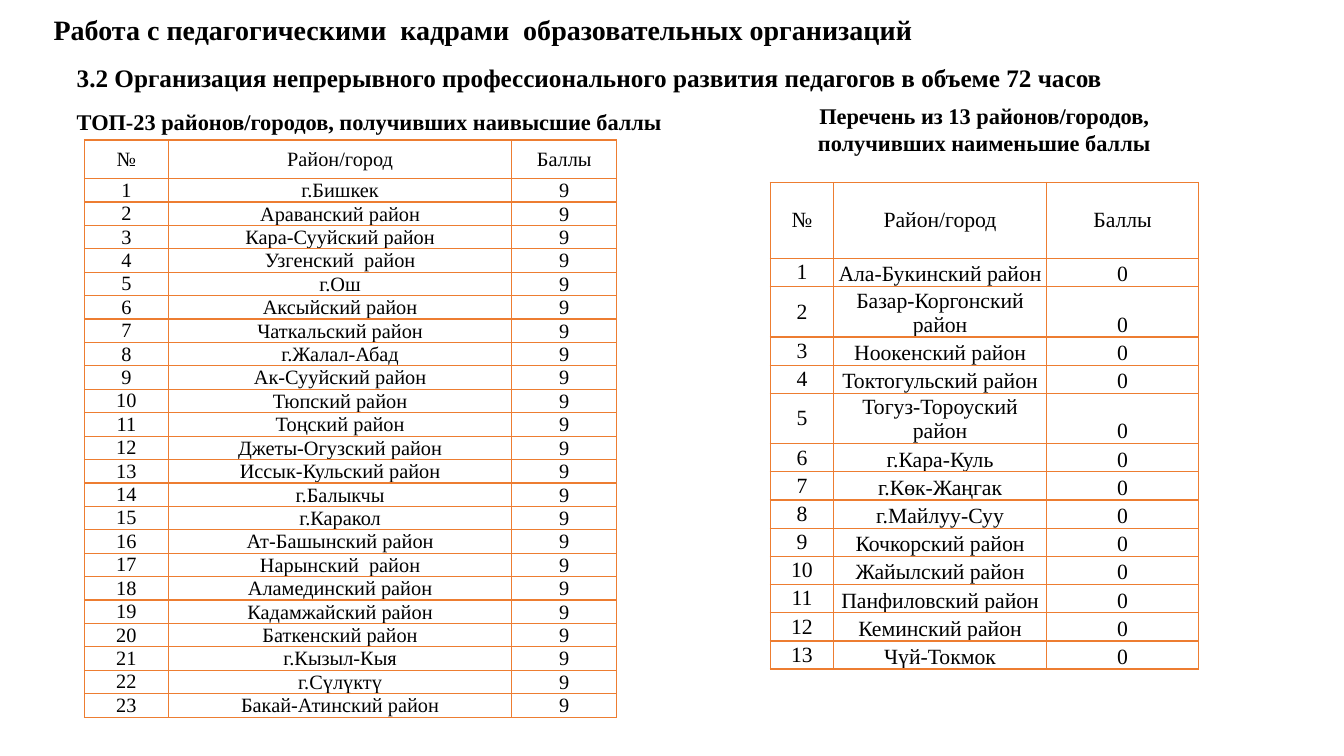
from dataclasses import dataclass

from lxml.etree import SubElement
from pptx import Presentation
from pptx.dml.color import RGBColor
from pptx.enum.text import MSO_ANCHOR, PP_ALIGN
from pptx.oxml.ns import qn
from pptx.slide import Slide
from pptx.table import _Cell
from pptx.text.text import TextFrame
from pptx.util import Cm, Pt


@dataclass(frozen=True)
class Theme:
    """Colours, font and type sizes in points."""
    font: str = "Times New Roman"
    ink: str = "000000"
    border: str = "ED7D31"
    border_width: float = 1
    title: float = 20
    subtitle: float = 18
    caption: float = 16
    top_table: float = 14.5
    low_table: float = 15.5


@dataclass(frozen=True)
class Label:
    """A bold text box, measured in centimetres."""
    text: str
    left: float
    top: float
    width: float
    height: float
    size: float
    align: PP_ALIGN = PP_ALIGN.CENTER
    anchor: MSO_ANCHOR = MSO_ANCHOR.TOP
    indent: float = 0.25
    spacing: float = 1.0


@dataclass(frozen=True)
class Ranking:
    """A numbered table of districts that share one score."""
    names: tuple[str, ...]
    score: int
    left: float
    top: float
    widths: tuple[float, ...]
    header_height: float
    row_height: float
    size: float
    tall_rows: tuple[int, ...] = ()
    tall_height: float = 1.27


THEME = Theme()
HEADER = ("№", "Район/город", "Баллы")

LABELS = (
    Label("3.2 Организация непрерывного профессионального развития педагогов в объеме 72 часов",
          0.25, 1.14, 29.21, 1.73, THEME.subtitle, anchor=MSO_ANCHOR.MIDDLE, spacing=0.9),
    Label("ТОП-23 районов/городов, получивших наивысшие баллы",
          1.42, 2.59, 15.77, 0.94, THEME.caption),
    Label("Перечень из 13 районов/городов, получивших наименьшие баллы",
          19.05, 2.46, 11.51, 1.63, THEME.caption),
    Label("Работа с педагогическими  кадрами  образовательных организаций",
          0.66, 0.2, 24.16, 1.12, THEME.title, align=PP_ALIGN.LEFT, indent=0.69),
)

RANKINGS = (
    Ranking(
        ("г.Бишкек", "Араванский район", "Кара-Сууйский район", "Узгенский  район", "г.Ош",
         "Аксыйский район", "Чаткальский район", "г.Жалал-Абад", "Ак-Сууйский район",
         "Тюпский район", "Тоңский район", "Джеты-Огузский район", "Иссык-Кульский район",
         "г.Балыкчы", "г.Каракол", "Ат-Башынский район", "Нарынский  район",
         "Аламединский район", "Кадамжайский район", "Баткенский район", "г.Кызыл-Кыя",
         "г.Сүлүктү", "Бакай-Атинский район"),
        9, 2.13, 3.53, (2.11, 8.66, 2.64), 0.97, 0.59, THEME.top_table),
    Ranking(
        ("Ала-Букинский район", "Базар-Коргонский район", "Ноокенский район",
         "Токтогульский район", "Тогуз-Тороуский район", "г.Кара-Куль", "г.Көк-Жаңгак",
         "г.Майлуу-Суу", "Кочкорский район", "Жайылский район", "Панфиловский район",
         "Кеминский район", "Чүй-Токмок"),
        0, 19.41, 4.6, (1.6, 5.36, 3.84), 1.91, 0.71, THEME.low_table, tall_rows=(2, 5)),
)


def write(tf: TextFrame, text: str, *, size: float, bold: bool = False,
          align: PP_ALIGN = PP_ALIGN.CENTER, spacing: float = 1.0) -> None:
    """Put one formatted paragraph into a text frame."""
    p = tf.paragraphs[0]
    p.alignment = align
    p.line_spacing = spacing
    r = p.add_run()
    r.text = text
    r.font.name = THEME.font
    r.font.size = Pt(size)
    r.font.bold = bold
    r.font.color.rgb = RGBColor.from_string(THEME.ink)


def add_label(s: Slide, label: Label) -> None:
    """Draw one heading."""
    sp = s.shapes.add_textbox(Cm(label.left), Cm(label.top), Cm(label.width), Cm(label.height))
    tf = sp.text_frame
    tf.word_wrap = True
    tf.vertical_anchor = label.anchor
    tf.margin_left = Cm(label.indent)
    write(tf, label.text, size=label.size, bold=True, align=label.align, spacing=label.spacing)


def format_cell(cell: _Cell, anchor: MSO_ANCHOR) -> None:
    """Give a cell no margins, thin borders and no fill."""
    cell.margin_left = cell.margin_right = cell.margin_top = cell.margin_bottom = 0
    cell.vertical_anchor = anchor
    tc_pr = cell._tc.get_or_add_tcPr()
    for side in ("lnL", "lnR", "lnT", "lnB"):
        ln = SubElement(tc_pr, qn(f"a:{side}"), w=str(Pt(THEME.border_width)))
        fill = SubElement(ln, qn("a:solidFill"))
        SubElement(fill, qn("a:srgbClr"), val=THEME.border)
    cell.fill.background()


def add_ranking(s: Slide, ranking: Ranking) -> None:
    """Draw one table of districts."""
    rows = [HEADER] + [(str(i), name, str(ranking.score))
                       for i, name in enumerate(ranking.names, 1)]
    heights = [ranking.header_height] + [
        ranking.tall_height if i in ranking.tall_rows else ranking.row_height
        for i in range(1, len(rows))]
    table = s.shapes.add_table(len(rows), len(HEADER), Cm(ranking.left), Cm(ranking.top),
                               Cm(sum(ranking.widths)), Cm(sum(heights))).table
    table.first_row = table.horz_banding = False
    for column, width in zip(table.columns, ranking.widths):
        column.width = Cm(width)
    for i, (values, height) in enumerate(zip(rows, heights)):
        table.rows[i].height = Cm(height)
        for j, value in enumerate(values):
            cell = table.cell(i, j)
            format_cell(cell, MSO_ANCHOR.BOTTOM if i and j else MSO_ANCHOR.MIDDLE)
            write(cell.text_frame, value, size=ranking.size)


def main() -> None:
    """Build and save the slide."""
    prs = Presentation()
    prs.slide_width, prs.slide_height = Cm(33.87), Cm(19.05)
    s = prs.slides.add_slide(prs.slide_layouts[6])
    for ranking in RANKINGS:
        add_ranking(s, ranking)
    for label in LABELS:
        add_label(s, label)
    prs.save("out.pptx")


if __name__ == "__main__":
    main()
